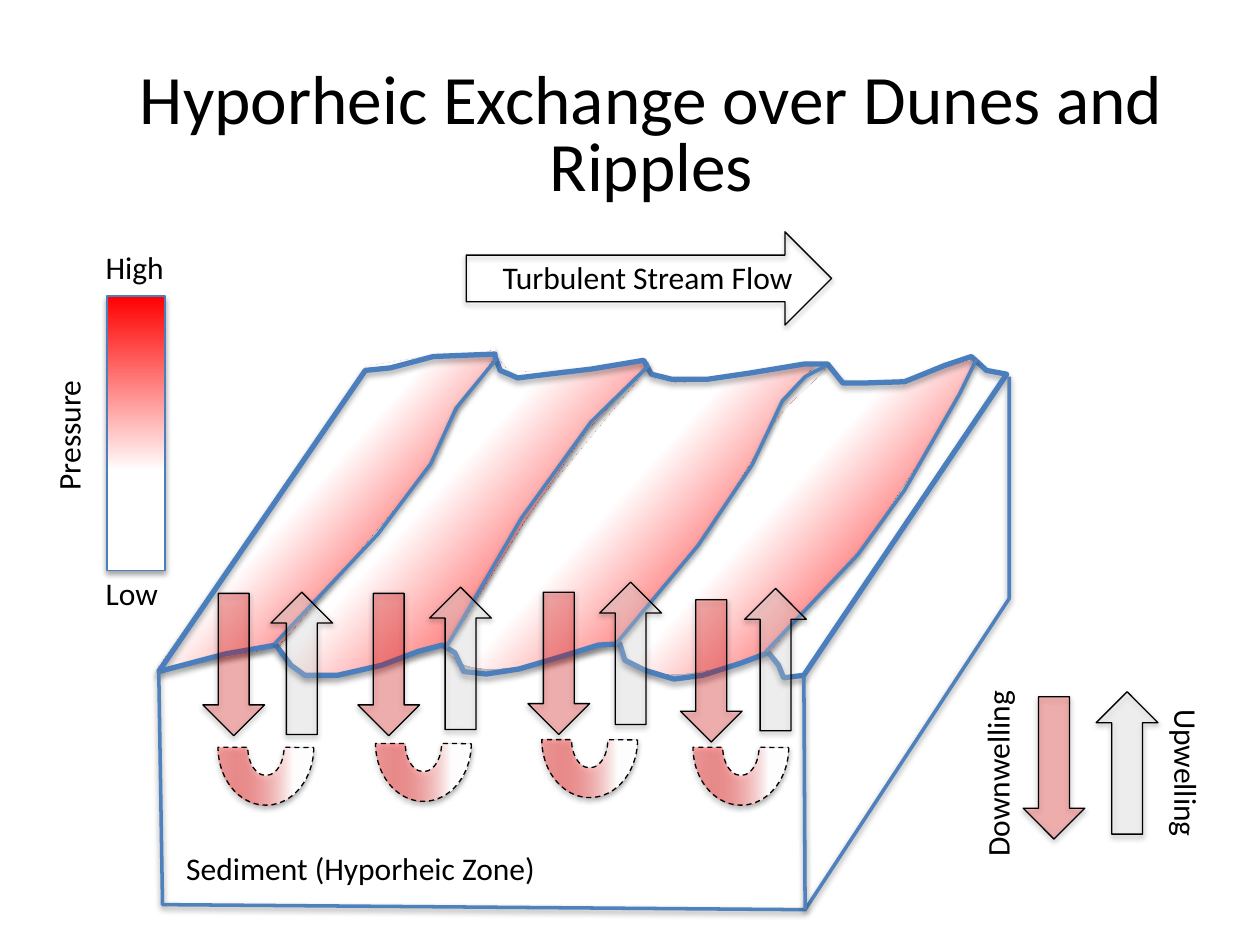
from lxml import etree
from pptx import Presentation
from pptx.dml.color import RGBColor
from pptx.enum.dml import MSO_LINE
from pptx.enum.shapes import MSO_CONNECTOR, MSO_SHAPE
from pptx.enum.text import MSO_ANCHOR, MSO_AUTO_SIZE, PP_ALIGN
from pptx.oxml.ns import qn
from pptx.util import Pt

PX = 9144  # EMU, 100 px to the inch
TITLE_ONLY = 5
RECT, DOWN_ARROW, U_TURN = MSO_SHAPE.RECTANGLE, MSO_SHAPE.DOWN_ARROW, MSO_SHAPE.BLOCK_ARC
STRAIGHT = MSO_CONNECTOR.STRAIGHT
DASH = MSO_LINE.DASH
MIDDLE, CENTER = MSO_ANCHOR.MIDDLE, PP_ALIGN.CENTER
FIT_SHAPE, NO_FIT = MSO_AUTO_SIZE.SHAPE_TO_FIT_TEXT, MSO_AUTO_SIZE.NONE

FONT = "Calibri"
BLACK, WHITE, RED = "000000", "FFFFFF", "FF0000"
EDGE_BLUE, RIM_BLUE = "4F81BD", "4B7EBC"
SOFT_SHADOW = (35, 23000)  # opacity in percent, distance in EMU
LINE_SHADOW = (38, 20000)

# Outlines in px: a pair is a straight step, six numbers are a cubic curve.
DUNE_FACES = [
    [(611, 517), (550, 539, 500, 546, 490, 508), (598, 366), (620, 319, 637, 316, 657, 291),
     (663, 299, 675, 308, 690, 304), (718, 305, 745, 292, 773, 286),
     (761, 318, 712, 395, 679, 442), (643, 478, 643, 478, 611, 517)],
    [(488, 510), (452, 521, 361, 549, 356, 512), (426, 400), (510, 298),
     (519, 300, 534, 307, 550, 303), (604, 294), (620, 292, 644, 286, 647, 289), (620, 320),
     (605, 356, 581, 388, 561, 422)],
    [(353, 511), (321, 521), (276, 533), (243, 536), (221, 515), (312, 406), (349, 354),
     (364, 319), (393, 280, 393, 264, 393, 282), (404, 296), (458, 293), (515, 288),
     (465, 342), (415, 415), (368, 492)],
    [(221, 512), (207, 516), (125, 531), (210, 410), (291, 291), (345, 282), (393, 282),
     (376, 306, 380, 301, 363, 324), (342, 369), (302, 416, 281, 443, 221, 512)],
]
CRESTS = [
    [(218, 511), (300, 424), (342, 368), (362, 324), (394, 285)],
    [(354, 514), (414, 411), (469, 335), (515, 290)],
    [(488, 512), (554, 433), (597, 369), (621, 318), (639, 299), (656, 290)],
    [(608, 517), (681, 440), (718, 389), (762, 312), (775, 285)],
]
BED_RIM = [
    (126, 533), (179, 519), (219, 512), (231, 528), (242, 536), (268, 536), (303, 528),
    (332, 517), (351, 512), (361, 518), (368, 533), (386, 535), (412, 531), (446, 521),
    (475, 512), (492, 511), (496, 524), (512, 532), (535, 539), (558, 536), (589, 526),
    (610, 518), (618, 528), (622, 538), (638, 536), (799, 297), (783, 294), (771, 283),
    (750, 290), (718, 303), (686, 304), (669, 304), (657, 289), (638, 289), (596, 296),
    (562, 301), (533, 301), (517, 297), (511, 286), (469, 293), (435, 297), (411, 300),
    (397, 294), (393, 282, 393, 286, 393, 281), (344, 283), (310, 292), (290, 294),
]
SEDIMENT_EDGE = [(126, 532), (129, 718), (639, 722), (801, 475), (801, 299)]

# Top left corners of the arrows and U-turns, in downstream order.
DOWNWELLING = [(161, 471), (284, 471), (419, 470), (540, 476)]
UPWELLING = [(215, 470), (341, 466), (476, 462), (591, 467)]
U_TURNS = [(173, 547), (298, 544), (430, 541), (550, 547)]
DOWN_KEY, UP_KEY = (812, 553), (870, 549)


def rgb(color):
    return RGBColor.from_string(color)


def px(*lengths):
    return [length * PX for length in lengths]


def set_alpha(color_element, percent):
    etree.SubElement(color_element, qn("a:alpha"), val=str(percent * 1000))


class DuneSlide:
    """Holds the current slide and the style of everything drawn on it."""

    def __init__(self, slide):
        self.slide = slide
        self.shapes = slide.shapes

    def style_font(self, paragraph, size):
        for run in paragraph.runs:
            run.font.name, run.font.size = FONT, Pt(size)
            run.font.color.rgb = rgb(BLACK)

    def title(self, text, box):
        title = self.shapes.title
        title.left, title.top, title.width, title.height = px(*box)
        frame = title.text_frame
        frame.text = text
        frame.word_wrap, frame.auto_size = True, NO_FIT
        frame.vertical_anchor = MIDDLE
        paragraph = frame.paragraphs[0]
        paragraph.alignment, paragraph.line_spacing = CENTER, 0.8
        self.style_font(paragraph, 39.6)

    def label(self, text, left, top, width, rotation=0):
        label = self.shapes.add_textbox(*px(left, top, width, 40))
        label.rotation = rotation
        frame = label.text_frame
        frame.text = text
        frame.word_wrap, frame.auto_size = False, FIT_SHAPE
        self.style_font(frame.paragraphs[0], 18)
        return label

    def stroke(self, shape, color, width):
        shape.line.color.rgb = rgb(color)
        shape.line.width = Pt(width)

    def cast_shadow(self, shape, shadow):
        """Append the shadow last in spPr, so call it after fill and line."""
        opacity, distance = shadow
        properties = shape.element.find(qn("p:spPr"))
        effects = etree.SubElement(properties, qn("a:effectLst"))
        outer = etree.SubElement(effects, qn("a:outerShdw"), blurRad="40000",
                                 dist=str(distance), dir="5400000", rotWithShape="0")
        set_alpha(etree.SubElement(outer, qn("a:srgbClr"), val=BLACK), opacity)

    def fade(self, shape, start, end, angle):
        """Fill from red at start to white at end; angle is counter-clockwise."""
        shape.fill.gradient()
        shape.fill.gradient_angle = angle
        for stop, color, position in zip(shape.fill.gradient_stops, (RED, WHITE), (start, end)):
            stop.color.rgb = rgb(color)
            stop.position = position

    def fill_alpha(self, shape, percent):
        set_alpha(shape.element.xpath("./p:spPr//a:srgbClr")[0], percent)

    def outline(self, steps, closed=False):
        start, *segments = steps
        points = [segment[i:i + 2] for segment in segments for i in range(0, len(segment), 2)]
        builder = self.shapes.build_freeform(*start, scale=PX)
        builder.add_line_segments(points, close=closed)
        shape = builder.convert_to_shape()
        lines = iter(shape.element.xpath(".//a:path/a:lnTo"))
        for segment in segments:
            targets = [next(lines) for _ in range(len(segment) // 2)]
            if len(targets) == 3:
                curve = etree.Element(qn("a:cubicBezTo"))
                targets[0].addprevious(curve)
                for target in targets:
                    curve.append(target[0])
                    target.getparent().remove(target)
        return shape

    def face(self, steps):
        face = self.outline(steps, closed=True)
        self.fade(face, 0.09, 0.56, 138)
        face.line.fill.background()
        self.cast_shadow(face, SOFT_SHADOW)

    def edge(self, steps, color=EDGE_BLUE, width=2, closed=False, shadow=LINE_SHADOW):
        edge = self.outline(steps, closed)
        edge.fill.background()
        self.stroke(edge, color, width)
        self.cast_shadow(edge, shadow)

    def straight_edge(self, start, end):
        edge = self.shapes.add_connector(STRAIGHT, *px(*start, *end))
        self.stroke(edge, EDGE_BLUE, 2)
        self.cast_shadow(edge, LINE_SHADOW)

    def arrow(self, corner, size=(49, 113), rotation=0, color=None):
        arrow = self.shapes.add_shape(DOWN_ARROW, *px(*corner, *size))
        arrow.rotation = rotation
        if color:
            arrow.fill.solid()
            arrow.fill.fore_color.rgb = rgb(color)
            self.fill_alpha(arrow, 25)
        else:
            arrow.fill.background()
        self.stroke(arrow, BLACK, 0.75)
        self.cast_shadow(arrow, LINE_SHADOW)

    def u_turn(self, corner):
        turn = self.shapes.add_shape(U_TURN, *px(*corner, 76, 92))
        turn.rotation = 180
        for index, value in enumerate((108.223, 216, 0.31)):
            turn.adjustments[index] = value
        self.fade(turn, 0, 0.79, 180)
        self.fill_alpha(turn, 32)
        self.stroke(turn, BLACK, 0.75)
        turn.line.dash_style = DASH
        self.cast_shadow(turn, SOFT_SHADOW)

    def pressure_scale(self):
        bar = self.shapes.add_shape(RECT, *px(85, 235, 46, 218))
        self.fade(bar, 0, 0.64, 270)
        self.stroke(bar, RIM_BLUE, 0.75)
        self.cast_shadow(bar, SOFT_SHADOW)
        self.shapes.add_group_shape([bar, self.label("Pressure", 0, 325, 108, 270),
                                     self.label("High", 74, 192, 67),
                                     self.label("Low", 74, 451, 62)])


def main():
    deck = Presentation()
    deck.slide_width, deck.slide_height = px(1000, 750)
    dunes = DuneSlide(deck.slides.add_slide(deck.slide_layouts[TITLE_ONLY]))

    dunes.title("Hyporheic Exchange over Dunes and Ripples", (67, 47, 900, 125))
    dunes.pressure_scale()
    dunes.arrow((478, 76), size=(74, 290), rotation=270)
    dunes.label("Turbulent Stream Flow", 389, 200, 253)

    for face in DUNE_FACES:
        dunes.face(face)
    dunes.edge(BED_RIM, RIM_BLUE, 3, closed=True, shadow=SOFT_SHADOW)
    for edge in CRESTS + [SEDIMENT_EDGE]:
        dunes.edge(edge)
    dunes.straight_edge((638, 536), (639, 722))
    dunes.label("Sediment (Hyporheic Zone)", 138, 669, 300)

    for corner in DOWNWELLING + [DOWN_KEY]:
        dunes.arrow(corner, color=RED)
    for corner in UPWELLING + [UP_KEY]:
        dunes.arrow(corner, rotation=180, color=WHITE)
    for corner in U_TURNS:
        dunes.u_turn(corner)
    dunes.label("Downwelling", 715, 593, 153, 270)
    dunes.label("Upwelling", 881, 594, 122, 90)

    deck.save("out.pptx")


if __name__ == "__main__":
    main()
